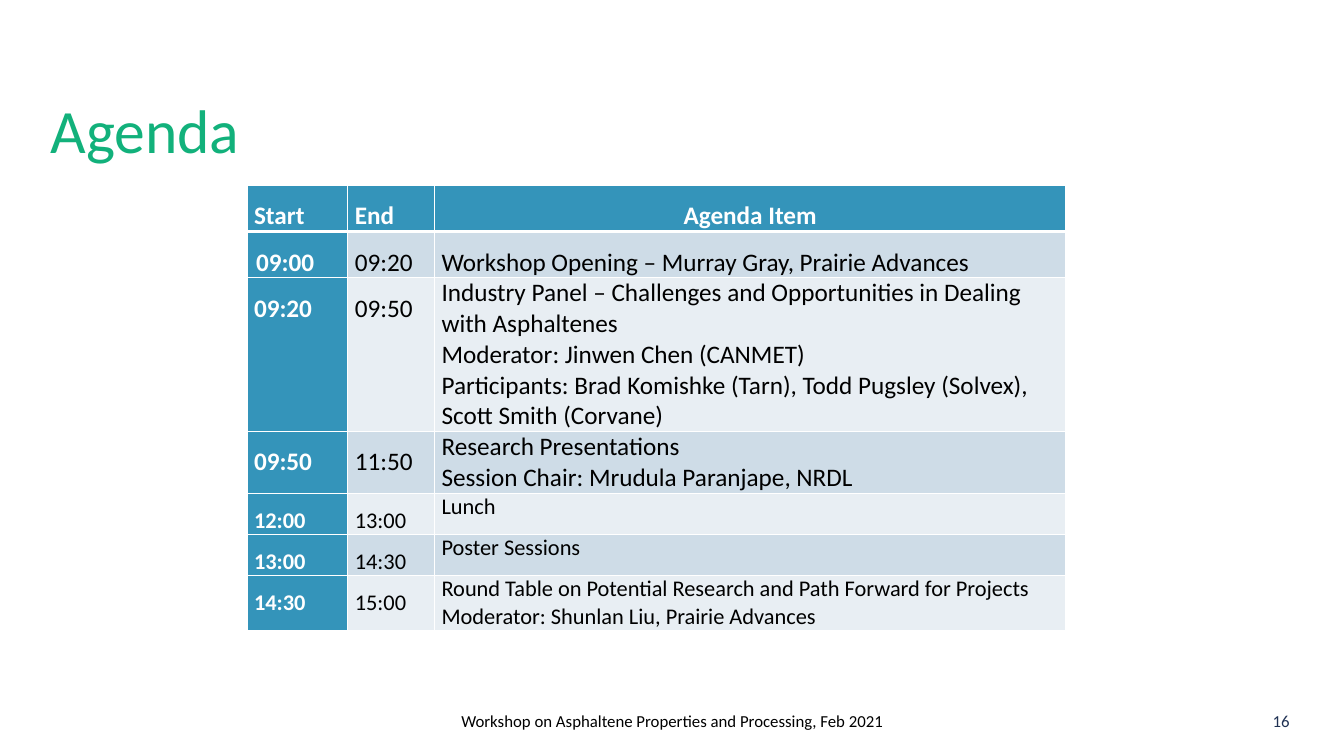
from dataclasses import dataclass

from lxml.etree import SubElement
from pptx import Presentation
from pptx.dml.color import RGBColor
from pptx.enum.text import MSO_ANCHOR, MSO_AUTO_SIZE, PP_ALIGN
from pptx.oxml.ns import qn
from pptx.slide import Slide
from pptx.table import _Cell
from pptx.text.text import TextFrame
from pptx.util import Inches, Pt


@dataclass(frozen=True)
class Theme:
    font: str = "Calibri"
    title_color: str = "12B17B"
    number_color: str = "203254"
    text_color: str = "000000"
    white: str = "FFFFFF"
    accent: str = "3494BA"
    bands: tuple[str, str] = ("CEDCE7", "E8EEF3")
    title_size: int = 44
    large_size: int = 18
    small_size: int = 16
    footer_size: int = 12
    time_spacing: float = 1.5


@dataclass(frozen=True)
class AgendaRow:
    start: str
    end: str
    item: str
    height: float
    size: int
    item_spacing: float = 1.0


@dataclass(frozen=True)
class FooterText:
    text: str
    left: float
    width: float
    color: str
    alignment: PP_ALIGN
    side_margin: float


THEME = Theme()
LARGE, SMALL = THEME.large_size, THEME.small_size
COLUMN_WIDTHS = (1.0, 0.86, 6.26)

AGENDA = (
    AgendaRow("Start", "End", "Agenda Item", 0.45, LARGE, THEME.time_spacing),
    AgendaRow("09:00", "09:20", "Workshop Opening – Murray Gray, Prairie Advances",
              0.45, LARGE, THEME.time_spacing),
    AgendaRow("09:20", "09:50",
              "Industry Panel – Challenges and Opportunities in Dealing with Asphaltenes\n"
              "Moderator: Jinwen Chen (CANMET)\n"
              "Participants: Brad Komishke (Tarn), Todd Pugsley (Solvex), "
              "Scott Smith (Corvane)", 1.52, LARGE),
    AgendaRow("09:50", "11:50",
              "Research Presentations\nSession Chair: Mrudula Paranjape, NRDL", 0.6, LARGE),
    AgendaRow("12:00", "13:00", "Lunch", 0.4, SMALL),
    AgendaRow("13:00", "14:30", "Poster Sessions", 0.4, SMALL),
    AgendaRow("14:30", "15:00",
              "Round Table on Potential Research and Path Forward for Projects\n"
              "Moderator: Shunlan Liu, Prairie Advances", 0.53, SMALL),
)

FOOTERS = (
    FooterText("16", 9.79, 3.0, THEME.number_color, PP_ALIGN.RIGHT, 0),
    FooterText("Workshop on Asphaltene Properties and Processing, Feb 2021",
               4.42, 4.5, THEME.text_color, PP_ALIGN.CENTER, 0.1),
)


def write_text(text_frame: TextFrame, text: str, size: int, color: str,
               bold: bool = False, alignment: PP_ALIGN = PP_ALIGN.LEFT,
               spacing: float = 1.0) -> None:
    text_frame.text = text
    for paragraph in text_frame.paragraphs:
        paragraph.alignment = alignment
        paragraph.line_spacing = spacing
        for run in paragraph.runs:
            run.font.name = THEME.font
            run.font.size = Pt(size)
            run.font.bold = bold
            run.font.color.rgb = RGBColor.from_string(color)


def set_margins(text_frame: TextFrame, side: float, vertical: float = 0) -> None:
    text_frame.margin_left = text_frame.margin_right = Inches(side)
    text_frame.margin_top = text_frame.margin_bottom = Inches(vertical)


def add_borders(cell: _Cell, top: int, bottom: int) -> None:
    properties = cell._tc.get_or_add_tcPr()
    for tag, width in (("a:lnL", 1), ("a:lnR", 1), ("a:lnT", top), ("a:lnB", bottom)):
        line = SubElement(properties, qn(tag), w=str(Pt(width)))
        line_fill = SubElement(line, qn("a:solidFill"))
        SubElement(line_fill, qn("a:srgbClr"), val=THEME.white)


def add_title(slide: Slide, text: str) -> None:
    title = slide.shapes.title
    title.left, title.top = Inches(0.5), Inches(0.99)
    title.width, title.height = Inches(10.31), Inches(1.23)
    text_frame = title.text_frame
    set_margins(text_frame, 0)
    text_frame.auto_size = MSO_AUTO_SIZE.NONE
    text_frame.vertical_anchor = MSO_ANCHOR.TOP
    write_text(text_frame, text, THEME.title_size, THEME.title_color, spacing=0.9)


def add_agenda(slide: Slide, rows: tuple[AgendaRow, ...]) -> None:
    table = slide.shapes.add_table(
        len(rows), len(COLUMN_WIDTHS), Inches(2.45), Inches(1.84),
        Inches(sum(COLUMN_WIDTHS)), Inches(sum(row.height for row in rows))).table
    for column, width in zip(table.columns, COLUMN_WIDTHS):
        column.width = Inches(width)

    for row_index, row in enumerate(rows):
        table.rows[row_index].height = Inches(row.height)
        is_header = row_index == 0
        for column_index, text in enumerate((row.start, row.end, row.item)):
            cell = table.cell(row_index, column_index)
            is_item = column_index == 2
            is_accent = is_header or column_index == 0
            cell.margin_left = cell.margin_right = Inches(0.07)
            cell.margin_top = cell.margin_bottom = 0
            write_text(
                cell.text_frame, text, row.size,
                THEME.white if is_accent else THEME.text_color, bold=is_accent,
                alignment=PP_ALIGN.CENTER if is_header and is_item else PP_ALIGN.LEFT,
                spacing=row.item_spacing if is_item else THEME.time_spacing)
            # A heavier rule separates the header from the first row
            add_borders(cell, top=3 if row_index == 1 else 1, bottom=3 if is_header else 1)
            cell.fill.solid()
            cell.fill.fore_color.rgb = RGBColor.from_string(
                THEME.accent if is_accent else THEME.bands[(row_index - 1) % 2])

    # The first start time is slightly indented
    first_time = table.cell(1, 0).text_frame.paragraphs[0]
    first_time._p.get_or_add_pPr().set("marL", str(Inches(0.02)))


def add_footer(slide: Slide, footer: FooterText) -> None:
    box = slide.shapes.add_textbox(
        Inches(footer.left), Inches(6.95), Inches(footer.width), Inches(0.4))
    text_frame = box.text_frame
    text_frame.word_wrap = True
    text_frame.vertical_anchor = MSO_ANCHOR.MIDDLE
    set_margins(text_frame, footer.side_margin, footer.side_margin / 2)
    write_text(text_frame, footer.text, THEME.footer_size, footer.color,
               alignment=footer.alignment)


def main() -> None:
    presentation = Presentation()
    presentation.slide_width = Inches(13.33)
    presentation.slide_height = Inches(7.5)
    slide = presentation.slides.add_slide(presentation.slide_layouts.get_by_name("Title Only"))

    # Heading, agenda table and footer line
    add_title(slide, "Agenda")
    add_agenda(slide, AGENDA)
    for footer in FOOTERS:
        add_footer(slide, footer)

    presentation.save("out.pptx")


if __name__ == "__main__":
    main()
